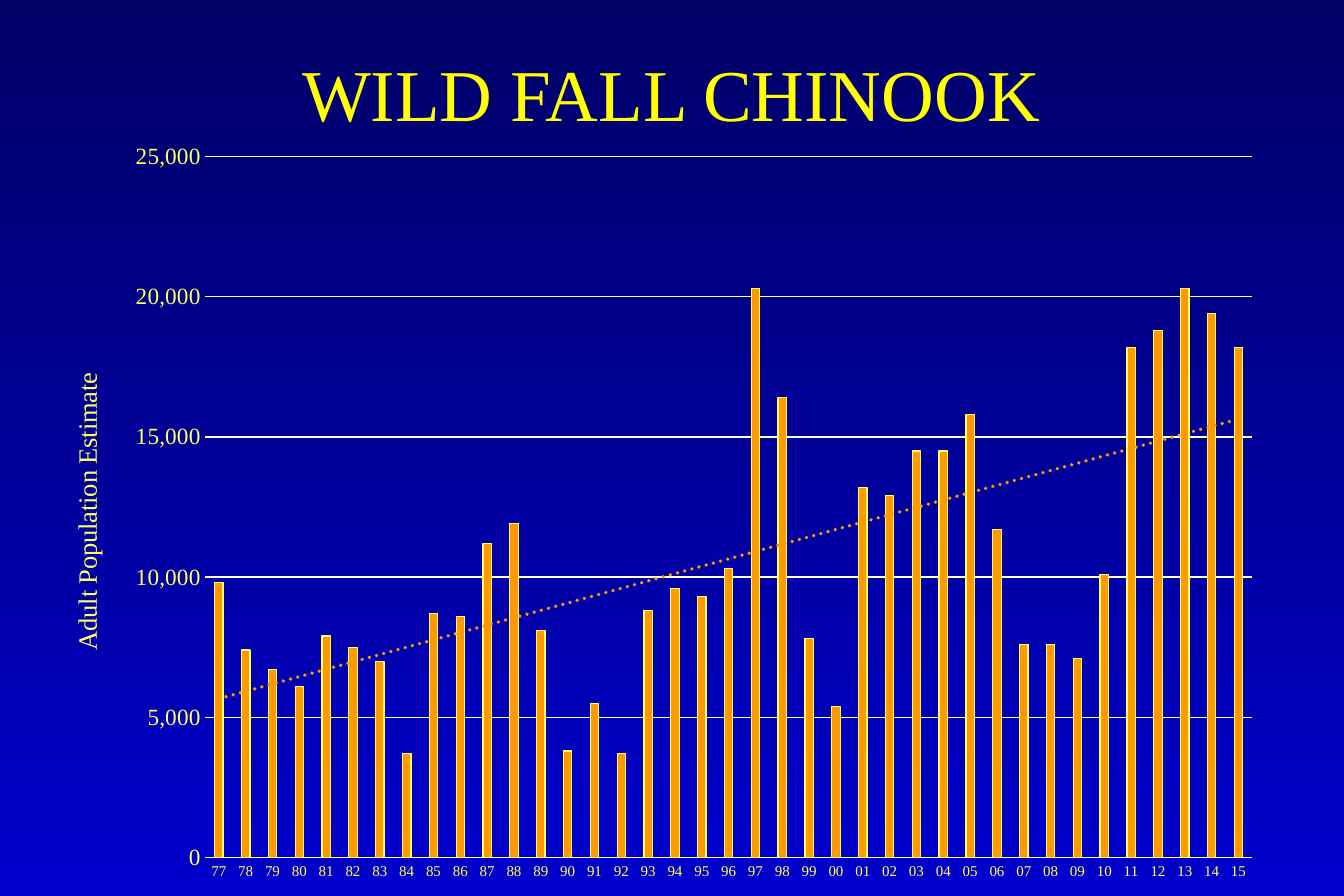
from dataclasses import dataclass

from lxml import etree
from pptx import Presentation
from pptx.chart.data import CategoryChartData
from pptx.dml.color import RGBColor
from pptx.enum.chart import XL_CHART_TYPE, XL_TICK_MARK
from pptx.enum.text import MSO_ANCHOR, PP_ALIGN
from pptx.oxml import parse_xml
from pptx.oxml.ns import qn
from pptx.util import Inches, Pt

COLUMN = XL_CHART_TYPE.COLUMN_CLUSTERED
NO_TICK = XL_TICK_MARK.NONE
TOP = MSO_ANCHOR.TOP
CENTER = PP_ALIGN.CENTER


@dataclass(frozen=True)
class Theme:
    face: str = "Times New Roman"
    dark: str = "000066"
    light: str = "0000CC"
    title: str = "FFFF00"
    label: str = "FFFF59"
    grid: str = "FFFFD9"
    bar: str = "FF9900"
    edge: str = "FFFF66"
    head: float = 44
    name: float = 16
    value: float = 14
    year: float = 9
    base: float = 10
    thin: float = 0.75
    trend: float = 2.25


THEME = Theme()

YEARS = [f"{year % 100:02d}" for year in range(1977, 2016)]
COUNTS = [
    9800, 7400, 6700, 6100, 7900, 7500, 7000, 3700, 8700, 8600,
    11200, 11900, 8100, 3800, 5500, 3700, 8800, 9600, 9300, 10300,
    20300, 16400, 7800, 5400, 13200, 12900, 14500, 14500, 15800, 11700,
    7600, 7600, 7100, 10100, 18200, 18800, 20300, 19400, 18200,
]


def style(font, size, color):
    font.name = THEME.face
    font.size = Pt(size)
    font.bold = False
    font.color.rgb = RGBColor.from_string(color)


def stroke(line, color):
    line.color.rgb = RGBColor.from_string(color)
    line.width = Pt(THEME.thin)


def add_back(slide):
    fill = slide.background.fill
    fill.gradient()
    fill.gradient_angle = 270
    for stop, color in zip(fill.gradient_stops, (THEME.dark, THEME.light)):
        stop.color.rgb = RGBColor.from_string(color)


def add_title(slide, box, text):
    frame = slide.shapes.add_textbox(*map(Inches, box)).text_frame
    frame.word_wrap = True
    frame.vertical_anchor = TOP
    frame.margin_top = Inches(0.11)
    para = frame.paragraphs[0]
    para.alignment = CENTER
    run = para.add_run()
    run.text = text
    style(run.font, THEME.head, THEME.title)


def add_trend(series):
    # Dotted linear trend, placed ahead of the categories
    trend = parse_xml(
        '<c:trendline xmlns:c="http://schemas.openxmlformats.org/drawingml/2006/chart"'
        ' xmlns:a="http://schemas.openxmlformats.org/drawingml/2006/main">'
        f'<c:spPr><a:ln w="{Pt(THEME.trend)}" cap="rnd"><a:solidFill>'
        f'<a:srgbClr val="{THEME.bar}"/></a:solidFill>'
        '<a:prstDash val="sysDot"/></a:ln></c:spPr>'
        '<c:trendlineType val="linear"/><c:dispRSqr val="0"/>'
        '<c:dispEq val="0"/></c:trendline>')
    series._element.find(qn("c:cat")).addprevious(trend)


def place_plot(chart, box, plot):
    # Fix the inner plot area as fractions of the chart box
    area = chart._chartSpace.find(".//" + qn("c:plotArea"))
    for old in area.findall(qn("c:layout")):
        area.remove(old)
    layout = etree.Element(qn("c:layout"))
    area.insert(0, layout)
    manual = etree.SubElement(layout, qn("c:manualLayout"))
    left, top, wide, high = box
    parts = [
        ("layoutTarget", "inner"), ("xMode", "edge"), ("yMode", "edge"),
        ("x", plot[0] / wide), ("y", plot[1] / high),
        ("w", plot[2] / wide), ("h", plot[3] / high),
    ]
    for tag, value in parts:
        etree.SubElement(manual, qn("c:" + tag)).set("val", str(value))


def add_graph(slide, box):
    data = CategoryChartData(number_format="#,##0")
    data.categories = YEARS
    data.add_series("Series 1", COUNTS)
    chart = slide.shapes.add_chart(COLUMN, *map(Inches, box), data).chart
    chart.has_title = False
    chart.has_legend = False
    style(chart.font, THEME.base, THEME.title)

    # Columns
    plot = chart.plots[0]
    plot.gap_width = 219
    plot.overlap = -27
    plot.vary_by_categories = False
    series = plot.series[0]
    series.format.fill.solid()
    series.format.fill.fore_color.rgb = RGBColor.from_string(THEME.bar)
    stroke(series.format.line, THEME.edge)
    add_trend(series)

    # Axes
    years, counts = chart.category_axis, chart.value_axis
    for axis, size in ((years, THEME.year), (counts, THEME.value)):
        axis.major_tick_mark = axis.minor_tick_mark = NO_TICK
        style(axis.tick_labels.font, size, THEME.label)
    stroke(years.format.line, THEME.grid)
    years.has_major_gridlines = False
    counts.format.line.fill.background()
    counts.minimum_scale, counts.maximum_scale = 0, 25000
    counts.major_unit = 5000
    counts.has_major_gridlines = True
    stroke(counts.major_gridlines.format.line, THEME.grid)
    counts.tick_labels.number_format = "#,##0"
    counts.tick_labels.number_format_is_linked = False

    # Axis title
    run = counts.axis_title.text_frame.paragraphs[0].add_run()
    run.text = "Adult Population Estimate"
    style(run.font, THEME.name, THEME.label)
    place_plot(chart, box, (1.34, 0.23, 8.76, 5.87))


def main():
    deck = Presentation()
    deck.slide_width, deck.slide_height = Inches(11.25), Inches(7.5)
    slide = deck.slides.add_slide(deck.slide_layouts[6])
    add_back(slide)
    add_title(slide, (0.56, 0.3, 10.12, 1.25), "WILD FALL CHINOOK")
    add_graph(slide, (0.38, 1.08, 10.31, 6.42))
    deck.save("out.pptx")


if __name__ == "__main__":
    main()
